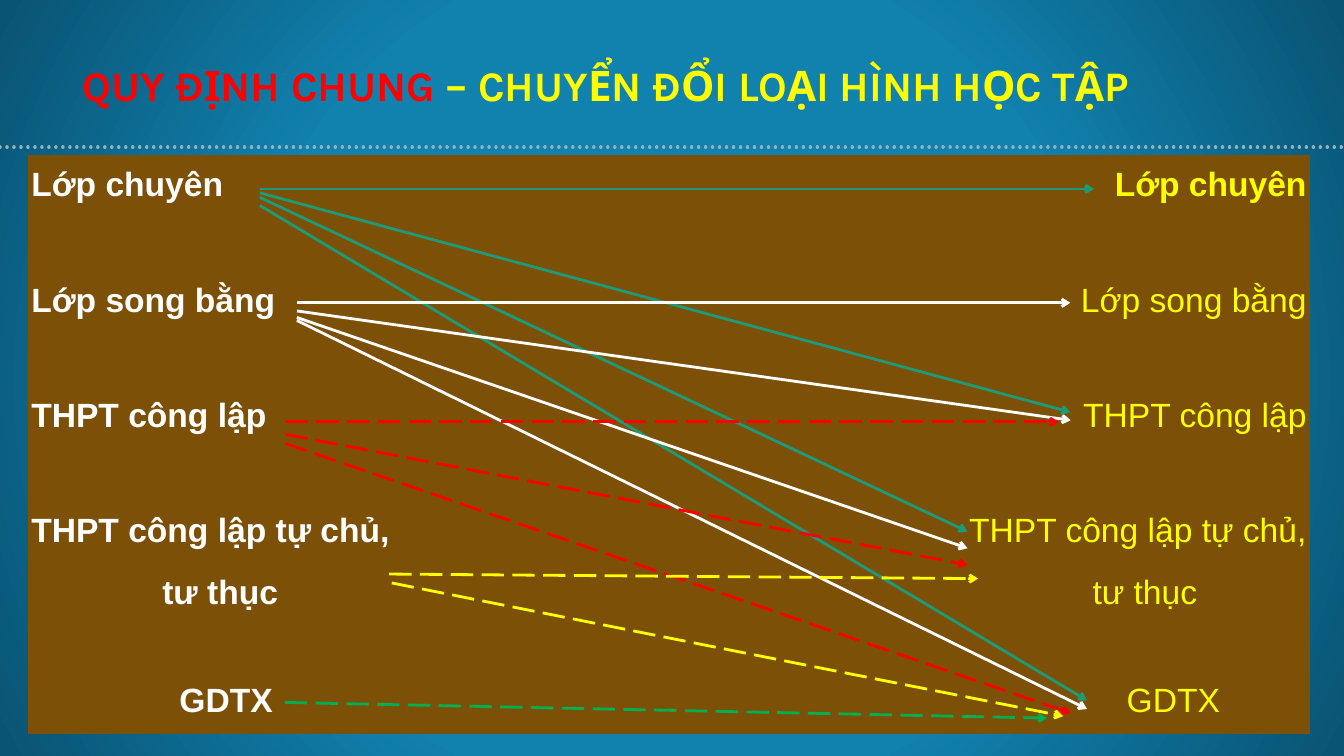
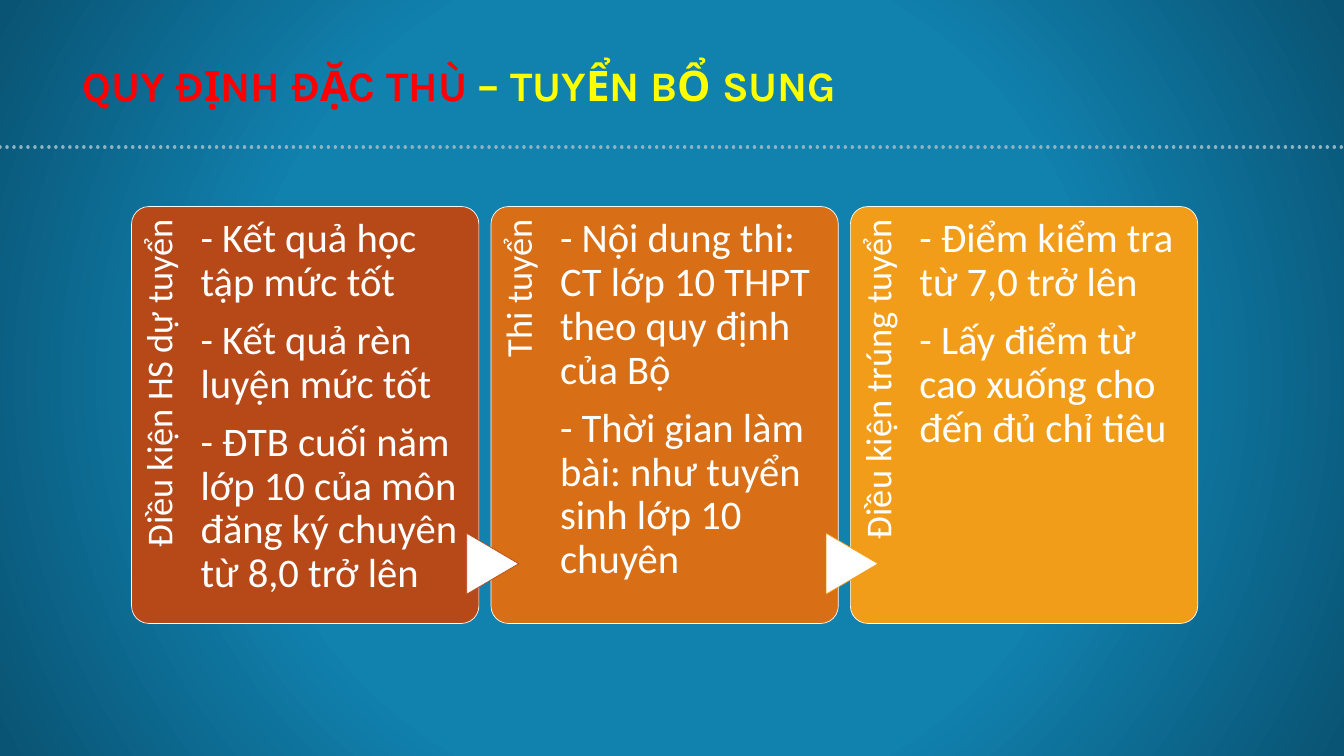
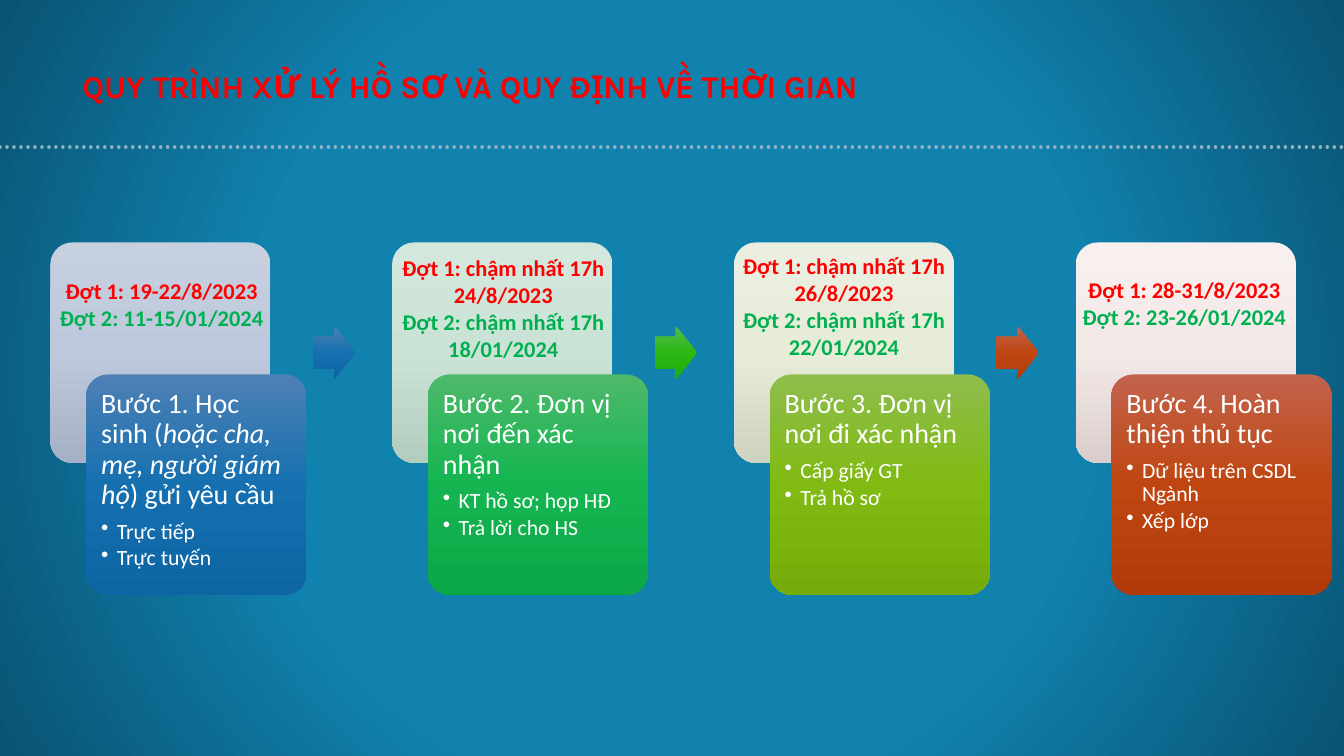
from lxml.etree import SubElement
from pptx import Presentation
from pptx.dml.color import RGBColor
from pptx.enum.dml import MSO_LINE
from pptx.enum.shapes import MSO_CONNECTOR, MSO_SHAPE as SHAPE
from pptx.enum.text import MSO_ANCHOR as ANCHOR, PP_ALIGN as ALIGN
from pptx.oxml.ns import qn
from pptx.util import Cm, Pt

WHITE = RGBColor(0xFF, 0xFF, 0xFF)
RED = RGBColor(0xFF, 0x00, 0x00)
YELLOW = RGBColor(0xFF, 0xFF, 0x00)
GREEN = RGBColor(0x00, 0xB0, 0x50)
TEAL = RGBColor(0x1D, 0x9A, 0x78)
BROWN = RGBColor(0x7D, 0x50, 0x08)
DOTS = RGBColor(0x91, 0xB3, 0xC1)
RUST = RGBColor(0xB7, 0x49, 0x19)
ORANGE = RGBColor(0xD8, 0x6E, 0x15)
AMBER = RGBColor(0xF1, 0x9D, 0x19)
SKY, DEEP = RGBColor(0x11, 0x81, 0xAE), RGBColor(0x09, 0x54, 0x74)


def shades(*codes):
    return [RGBColor.from_string(code) for code in codes]


BLUE_FADE = shades("4E80B5", "1670B0", "0D65A3")
GREEN_FADE = shades("4EB96A", "14B551", "0CA746")
LEAF_FADE = shades("55BB4E", "2BB714", "21AA0B")
LIME_FADE = shades("8EBD4D", "81BA13", "75AC0A")
BRICK_FADE = shades("C2634D", "BF4611", "B13B08")
PALE_BLUE = shades("C6D0DF", "BCC8DB", "A5B1C5")
PALE_GREEN = shades("D4E7DC", "CAE3D6", "B2CCBE")
PALE_LIME = shades("EBEFE1", "E6ECD8", "CDD3BF")
PALE_PINK = shades("F7F0EF", "F3E9E7", "DACECC")

SLIDE_W, SLIDE_H = 67.72, 38.1
NO_GRID = "{2D5ABB26-0587-4C30-8999-92F81FD0307C}"


def fade(owner, colors, stops=(0, 50, 100), radial=False):
    grad = owner._element.find(".//" + qn("a:gradFill"))
    for child in list(grad):
        grad.remove(child)
    gs_lst = SubElement(grad, qn("a:gsLst"))
    for color, stop in zip(colors, stops):
        gs = SubElement(gs_lst, qn("a:gs"), pos=str(stop * 1000))
        SubElement(gs, qn("a:srgbClr"), val=str(color))
    if radial:
        path = SubElement(grad, qn("a:path"), path="circle")
        SubElement(path, qn("a:fillToRect"), l="50000", t="50000", r="50000", b="50000")
    else:
        SubElement(grad, qn("a:lin"), ang="5400000", scaled="0")


def add_shape(s, kind, x, y, w, h, fill, line=None, adj=()):
    sp = s.shapes.add_shape(kind, Cm(x), Cm(y), Cm(w), Cm(h))
    sp.shadow.inherit = False
    for i, value in enumerate(adj):
        sp.adjustments[i] = value
    if isinstance(fill, list):
        sp.fill.gradient()
        fade(sp, fill)
    else:
        sp.fill.solid()
        sp.fill.fore_color.rgb = fill
    if line is None:
        sp.line.fill.background()
    else:
        sp.line.color.rgb = line
        sp.line.width = Pt(1)
    return sp


def add_line(s, x1, y1, x2, y2, color, width, dash=None, arrow=False):
    cx = s.shapes.add_connector(MSO_CONNECTOR.STRAIGHT, Cm(x1), Cm(y1), Cm(x2), Cm(y2))
    cx.line.color.rgb = color
    cx.line.width = Pt(width)
    if dash is not None:
        cx.line.dash_style = dash
    if arrow:
        SubElement(cx.line._get_or_add_ln(), qn("a:tailEnd"), type="arrow")
    SubElement(cx._element.spPr, qn("a:effectLst"))
    return cx


def add_box(s, x, y, w, h, insets=(0.25, 0.13, 0.25, 0.13)):
    sp = s.shapes.add_textbox(Cm(x), Cm(y), Cm(w), Cm(h))
    tf = sp.text_frame
    tf.word_wrap = True
    tf.margin_left, tf.margin_top, tf.margin_right, tf.margin_bottom = map(Cm, insets)
    return sp, tf


def add_paragraph(tf, first, align=ALIGN.LEFT, spacing=0.9, before=0, after=0):
    p = tf.paragraphs[0] if first else tf.add_paragraph()
    p.alignment = align
    p.line_spacing = spacing
    p.space_before, p.space_after = Pt(before), Pt(after)
    return p


def indent(p, left, hanging=0):
    pPr = p._p.get_or_add_pPr()
    pPr.set("marL", str(Cm(left)))
    pPr.set("indent", str(-Cm(hanging)))
    return pPr


def add_run(p, text, size, color=WHITE, font="Calibri", bold=False, italic=False):
    r = p.add_run()
    r.text = text
    r.font.size, r.font.name = Pt(size), font
    r.font.bold, r.font.italic = bold, italic
    r.font.color.rgb = color


def titled_slide(prs, runs, size=60):
    s = prs.slides.add_slide(prs.slide_layouts[6])
    s.background.fill.gradient()
    fade(s, [SKY, SKY, DEEP], (0, 55, 99), radial=True)
    rule = add_line(s, 0, 7.42, SLIDE_W, 7.42, DOTS, 5, MSO_LINE.ROUND_DOT)
    rule.line._get_or_add_ln().set("cap", "rnd")
    _, tf = add_box(s, 3.91, 2.18, 60.02, 4.5)
    tf.vertical_anchor = ANCHOR.MIDDLE
    p = add_paragraph(tf, True, before=20)
    for text, color in runs:
        add_run(p, text, size, color, "Karla", bold=True)
    return s


def school_table(s, x, y, w, h):
    rows = [["Lớp chuyên"], ["Lớp song bằng"], ["THPT công lập"],
            ["THPT công lập tự chủ,", "tư thục"], ["GDTX"]]
    indents = {"tư thục": (6.6, 21.16), "GDTX": (7.46, 22.88)}
    frame = s.shapes.add_table(len(rows), 2, Cm(x), Cm(y), Cm(w), Cm(h))
    table = frame.table
    table.first_row = table.horz_banding = False
    table._tbl.tblPr.find(qn("a:tableStyleId")).text = NO_GRID
    for i, lines in enumerate(rows):
        for side, color in enumerate((WHITE, YELLOW)):
            cell = table.cell(i, side)
            cell.fill.solid()
            cell.fill.fore_color.rgb = BROWN
            cell.margin_left = cell.margin_right = Cm(0.18)
            cell.margin_top = cell.margin_bottom = 0
            if i == len(rows) - 1:
                cell.vertical_anchor = ANCHOR.BOTTOM
                cell.margin_bottom = Cm(0.73)
            for n, text in enumerate(lines):
                align = ALIGN.RIGHT if side and text not in indents else ALIGN.LEFT
                p = add_paragraph(cell.text_frame, n == 0, align, 1.3, 9, 9)
                if text in indents:
                    indent(p, indents[text][side])
                add_run(p, text, 48, color, "Arial", bold=side == 0 or i == 0)


def transfer_arrows(s, x, y):
    dash = MSO_LINE.LONG_DASH
    routes = [
        (TEAL, None, [(11.7, 1.7, 53.72, 1.7), (11.7, 1.9, 52.53, 12.95),
                      (11.7, 2.13, 47.35, 18.97), (11.7, 2.54, 53.37, 27.48)]),
        (WHITE, None, [(13.56, 7.44, 52.53, 7.44), (13.56, 7.85, 52.55, 13.36),
                       (13.56, 8.18, 47.35, 19.81), (13.56, 8.33, 53.37, 27.91)]),
        (RED, dash, [(12.98, 13.44, 51.94, 13.44), (12.98, 14.07, 47.35, 20.65),
                     (12.98, 14.53, 52.55, 28.12)]),
        (YELLOW, dash, [(18.21, 21.11, 47.88, 21.34), (18.34, 21.56, 52.17, 28.27)]),
        (GREEN, dash, [(12.95, 27.58, 51.36, 28.37)]),
    ]
    for color, style, lines in routes:
        for x1, y1, x2, y2 in lines:
            add_line(s, x + x1, y + y1, x + x2, y + y2, color, 4, style, arrow=True)


def condition_card(s, x, y, w, h, fill, label, points, link_line):
    add_shape(s, SHAPE.ROUNDED_RECTANGLE, x, y, w, h, fill, WHITE, [0.05])
    sp, tf = add_box(s, x - 6.88, y + 6.86, 17.22, 3.51, (0, 0.5, 0.64, 0))
    sp.rotation = 270
    add_run(add_paragraph(tf, True, ALIGN.RIGHT), label, 52)
    if link_line is not None:
        link = add_shape(s, SHAPE.FLOWCHART_EXTRACT, x - 1.45, y + 16.69, 3.07, 2.62,
                         WHITE, link_line)
        link.rotation = 90
    _, tf = add_box(s, x + 3.48, y, 13.03, h, (0, 0.56, 0, 0))
    for n, point in enumerate(points):
        add_run(add_paragraph(tf, n == 0, after=20), point, 58)


def step(s, x, y, size, pale, strong, heading, bullets, dates, dates_at, arrow):
    add_shape(s, SHAPE.ROUNDED_RECTANGLE, x, y, size, size, pale, adj=[0.1])
    cx, cy = x + 1.8, y + 6.65
    add_shape(s, SHAPE.ROUNDED_RECTANGLE, cx, cy, size, size, strong, adj=[0.1])
    _, tf = add_box(s, cx + 0.33, cy + 0.33, size - 0.64, size - 0.64, (0.43,) * 4)
    p = add_paragraph(tf, True, after=14)
    for n, text in enumerate(heading):
        add_run(p, text, 40, italic=n == 1)
    for text in bullets:
        p = add_paragraph(tf, False, after=4.65)
        SubElement(indent(p, 0.79, 0.79), qn("a:buChar"), char="•")
        add_run(p, text, 31)
    if arrow is not None:
        add_shape(s, SHAPE.RIGHT_ARROW, x + 13.23, y + 4.22, 2.13, 2.67, arrow, adj=[0.6, 0.5])
    dx, dy, height = dates_at
    _, tf = add_box(s, x + dx, y + dy, 11.2, height)
    for n, (text, color) in enumerate(zip(dates, (RED, GREEN))):
        p = add_paragraph(tf, n == 0, ALIGN.CENTER, 1.0)
        add_run(p, text, 32, color, bold=True)


def transfer_slide(prs):
    s = titled_slide(prs, [("QUY ĐỊNH CHUNG ", RED),
                           ("– CHUYỂN ĐỔI LOẠI HÌNH HỌC TẬP", YELLOW)])
    school_table(s, 1.4, 7.82, 64.62, 29.06)
    transfer_arrows(s, 1.4, 7.82)


def admission_slide(prs):
    s = titled_slide(prs, [("QUY ĐỊNH ĐẶC THÙ ", RED), ("– TUYỂN BỔ SUNG", YELLOW)])
    cards = [
        (RUST, "Điều kiện HS dự tuyển",
         ["- Kết quả học tập mức tốt", "- Kết quả rèn luyện mức tốt",
          "- ĐTB cuối năm lớp 10 của môn đăng ký chuyên từ 8,0 trở lên"], None),
        (ORANGE, "Thi tuyển",
         ["- Nội dung thi: CT lớp 10 THPT theo quy định của Bộ",
          "- Thời gian làm bài: như tuyển sinh lớp 10 chuyên"], RUST),
        (AMBER, "Điều kiện trúng tuyển",
         ["- Điểm kiểm tra từ 7,0 trở lên",
          "- Lấy điểm từ cao xuống cho đến đủ chỉ tiêu"], AMBER),
    ]
    for i, card in enumerate(cards):
        condition_card(s, 6.63 + i * 18.11, 10.41, 17.5, 21.01, *card)


def process_slide(prs):
    s = titled_slide(prs, [("QUY TRÌNH XỬ LÝ HỒ SƠ VÀ QUY ĐỊNH VỀ THỜI GIAN", RED)], 45)
    steps = [
        (PALE_BLUE, BLUE_FADE,
         ["Bước 1. Học sinh (", "hoặc cha, mẹ, người giám hộ", ") gửi yêu cầu"],
         ["Trực tiếp", "Trực tuyến"],
         ["Đợt 1: 19-22/8/2023", "Đợt 2: 11-15/01/2024"], (0, 1.63, 3), BLUE_FADE),
        (PALE_GREEN, GREEN_FADE, ["Bước 2. Đơn vị nơi đến xác nhận"],
         ["KT hồ sơ; họp HĐ", "Trả lời cho HS"],
         ["Đợt 1: chậm nhất 17h 24/8/2023", "Đợt 2: chậm nhất 17h 18/01/2024"],
         (0, 0.48, 5.74), LEAF_FADE),
        (PALE_LIME, LIME_FADE, ["Bước 3. Đơn vị nơi đi xác nhận"],
         ["Cấp giấy GT", "Trả hồ sơ"],
         ["Đợt 1: chậm nhất 17h 26/8/2023", "Đợt 2: chậm nhất 17h 22/01/2024"],
         (-0.05, 0.36, 5.74), BRICK_FADE),
        (PALE_PINK, BRICK_FADE, ["Bước 4. Hoàn thiện thủ tục"],
         ["Dữ liệu trên CSDL Ngành", "Xếp lớp"],
         ["Đợt 1: 28-31/8/2023", "Đợt 2: 23-26/01/2024"], (-0.13, 1.55, 3), None),
    ]
    for i, parts in enumerate(steps):
        step(s, 2.54 + i * 17.22, 12.22, 11.1, *parts)


def main():
    prs = Presentation()
    prs.slide_width, prs.slide_height = Cm(SLIDE_W), Cm(SLIDE_H)
    transfer_slide(prs)
    admission_slide(prs)
    process_slide(prs)
    prs.save("out.pptx")


if __name__ == "__main__":
    main()
